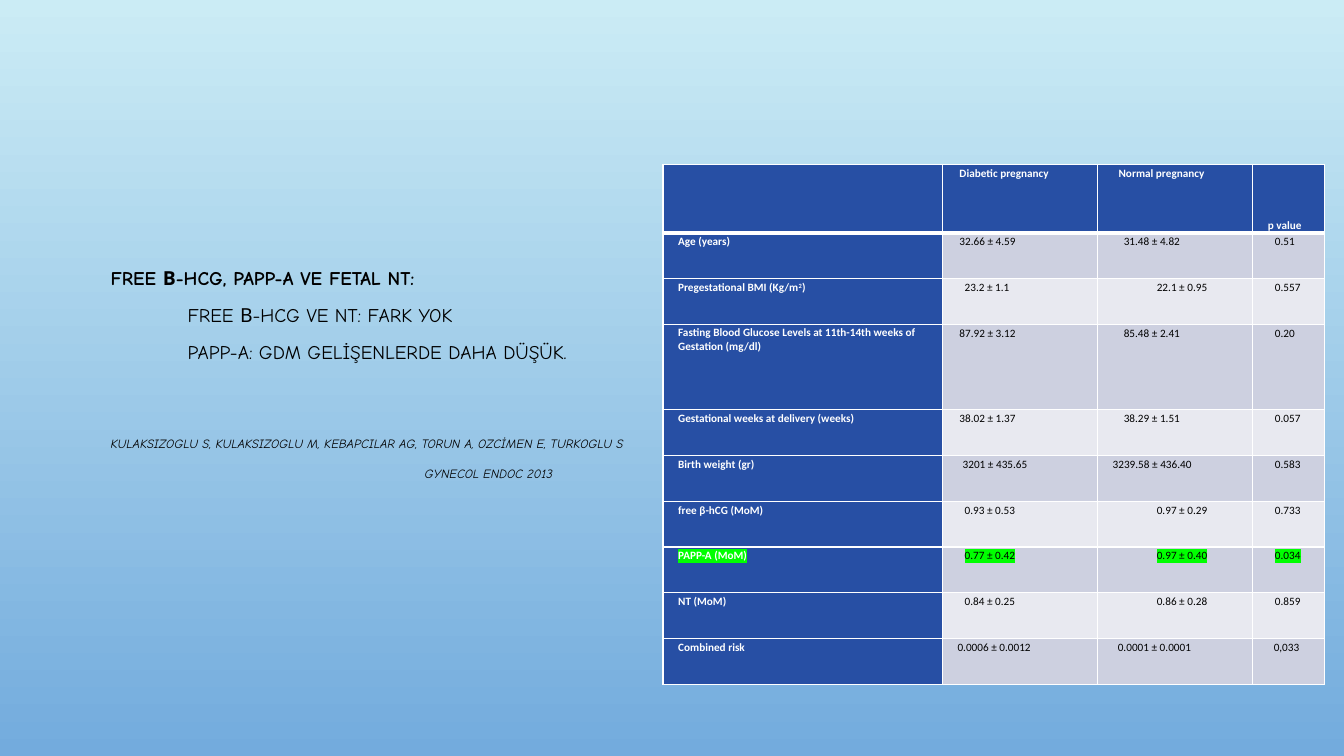
from dataclasses import dataclass

from lxml import etree
from pptx import Presentation
from pptx.dml.color import RGBColor
from pptx.enum.text import MSO_ANCHOR, PP_ALIGN
from pptx.oxml.ns import qn
from pptx.util import Cm, Pt

LEFT, CENTER = PP_ALIGN.LEFT, PP_ALIGN.CENTER
TOP, BOTTOM = MSO_ANCHOR.TOP, MSO_ANCHOR.BOTTOM


@dataclass(frozen=True)
class Theme:
    sky: str = "CBECF5"
    horizon: str = "73ABDD"
    navy: str = "274FA4"
    bands: tuple[str, str] = ("CDD0E0", "E8E9F0")
    white: str = "FFFFFF"
    black: str = "000000"
    marker: str = "00FF00"
    summary_font: str = "Comic Neue"
    table_font: str = "Calibri"
    summary_size: float = 13.8
    citation_size: float = 9
    table_size: float = 8


@dataclass(frozen=True)
class Statement:
    text: str
    size: float
    bold: bool = False
    italic: bool = False
    margin: float = 0
    before: float = 10


@dataclass(frozen=True)
class Entry:
    text: str
    margin: float = 0
    align: PP_ALIGN = LEFT
    first_line: float = 0.38
    anchor: MSO_ANCHOR = TOP


@dataclass(frozen=True)
class Measure:
    label: str
    diabetic: Entry
    normal: Entry
    p_value: Entry
    superscript: str = ""
    label_end: str = ""
    second_line: str = ""
    height: float = 1.155
    marked: bool = False


THEME = Theme()

STATEMENTS = [
    Statement("FREE Β-HCG, PAPP-A VE FETAL NT:", THEME.summary_size, bold=True, before=0),
    Statement("FREE Β-HCG VE NT: FARK YOK", THEME.summary_size, margin=1.94),
    Statement("PAPP-A: GDM GELİŞENLERDE DAHA DÜŞÜK.", THEME.summary_size, margin=1.94),
    Statement("KULAKSIZOGLU S, KULAKSIZOGLU M, KEBAPCILAR AG, TORUN A, OZCİMEN E, TURKOGLU S",
              THEME.citation_size, italic=True, before=52),
    Statement("GYNECOL ENDOC 2013", THEME.citation_size, italic=True, margin=7.91),
]

COLUMN_WIDTHS = [7.04, 3.91, 3.91, 1.8]
HEADER_HEIGHT = 1.73
HEADINGS = [
    Entry(""),
    Entry("Diabetic pregnancy", 0.3, first_line=0.13),
    Entry("Normal pregnancy", 0.38, first_line=0.15),
    Entry("p value", anchor=BOTTOM),
]
MEASURES = [
    Measure("Age (years)", Entry("32.66 ± 4.59", 0.05), Entry("31.48 ± 4.82", 0.28),
            Entry("0.51", 0.18)),
    Measure("Pregestational BMI (Kg/m", Entry("23.2 ± 1.1", 0.18),
            Entry("22.1 ± 0.95", 0.1, CENTER), Entry("0.557", 0.18),
            superscript="2", label_end=")"),
    Measure("Fasting Blood Glucose Levels at 11th-14th weeks of", Entry("87.92 ± 3.12", 0.05),
            Entry("85.48 ± 2.41", 0.28), Entry("0.20", 0.18),
            second_line="Gestation (mg/dl)", height=2.14),
    Measure("Gestational weeks at delivery (weeks)", Entry("38.02 ± 1.37", 0.05),
            Entry("38.29 ± 1.51", 0.28), Entry("0.057", 0.18)),
    Measure("Birth weight (gr)", Entry("3201 ± 435.65", 0.13), Entry("3239.58 ± 436.40"),
            Entry("0.583", 0.18)),
    Measure("free β-hCG (MoM)", Entry("0.93 ± 0.53", 0.18), Entry("0.97 ± 0.29", 0.1, CENTER),
            Entry("0.733", 0.18)),
    Measure("PAPP-A (MoM)", Entry("0.77 ± 0.42", 0.18), Entry("0.97 ± 0.40", 0.1, CENTER),
            Entry("0.034", 0.18), marked=True),
    Measure("NT (MoM)", Entry("0.84 ± 0.25", 0.18), Entry("0.86 ± 0.28", 0.1, CENTER),
            Entry("0.859", 0.18)),
    Measure("Combined risk", Entry("0.0006 ± 0.0012"), Entry("0.0001 ± 0.0001", 0.13),
            Entry("0,033", 0.15)),
]


def write(paragraph, text: str, *, size: float = THEME.table_size,
          font: str = THEME.table_font, color: str = THEME.black, bold: bool = False,
          italic: bool = False, margin: float = 0, first_line: float = 0,
          before: float = 0, spacing: float = 1.07, align: PP_ALIGN = LEFT,
          superscript: bool = False, marked: bool = False) -> None:
    paragraph.alignment = align
    paragraph.line_spacing = spacing
    paragraph.space_before = Pt(before)
    properties = paragraph._p.get_or_add_pPr()
    properties.set("marL", str(Cm(margin)))
    properties.set("indent", str(Cm(first_line)))
    run = paragraph.add_run()
    run.text = text
    run.font.size = Pt(size)
    run.font.name = font
    run.font.bold = bold
    run.font.italic = italic
    run.font.color.rgb = RGBColor.from_string(color)
    run_properties = run.font._element
    if superscript:
        run_properties.set("baseline", "30000")
    if marked:
        highlight = etree.Element(qn("a:highlight"))
        etree.SubElement(highlight, qn("a:srgbClr"), val=THEME.marker)
        run_properties.find(qn("a:solidFill")).addnext(highlight)


def style_cell(cell, fill: str, anchor: MSO_ANCHOR, bottom: float, top: float) -> None:
    cell.margin_left, cell.margin_right = Cm(0), Cm(0.13)
    cell.margin_top, cell.margin_bottom = Cm(0.03), Cm(0)
    cell.vertical_anchor = anchor
    properties = cell._tc.get_or_add_tcPr()
    for side, width in (("L", 1), ("R", 1), ("T", top), ("B", bottom)):
        border = etree.SubElement(properties, qn(f"a:ln{side}"), w=str(Pt(width)))
        paint = etree.SubElement(border, qn("a:solidFill"))
        etree.SubElement(paint, qn("a:srgbClr"), val=THEME.white)
    cell.fill.solid()
    cell.fill.fore_color.rgb = RGBColor.from_string(fill)


def write_entry(cell, entry: Entry, color: str, bold: bool, marked: bool = False) -> None:
    if entry.text:
        write(cell.text_frame.paragraphs[0], entry.text, color=color, bold=bold,
              margin=entry.margin, first_line=entry.first_line, align=entry.align,
              marked=marked)


def write_label(cell, measure: Measure) -> None:
    label = cell.text_frame.paragraphs[0]
    parts = (measure.label, measure.superscript, measure.label_end)
    for part in filter(None, parts):
        write(label, part, color=THEME.white, bold=True, first_line=0.38,
              spacing=0.97 if measure.second_line else 1.07,
              superscript=part == measure.superscript, marked=measure.marked)
    if measure.second_line:
        write(cell.text_frame.add_paragraph(), measure.second_line, color=THEME.white,
              bold=True, first_line=0.38)


def add_summary(slide) -> None:
    frame = slide.shapes.add_textbox(Cm(2.54), Cm(6.58), Cm(14.17), Cm(9.5)).text_frame
    frame.word_wrap = True
    for index, statement in enumerate(STATEMENTS):
        paragraph = frame.add_paragraph() if index else frame.paragraphs[0]
        write(paragraph, statement.text, size=statement.size, font=THEME.summary_font,
              bold=statement.bold, italic=statement.italic, margin=statement.margin,
              before=statement.before, spacing=1)


def add_measures(slide) -> None:
    heights = [HEADER_HEIGHT] + [measure.height for measure in MEASURES]
    table = slide.shapes.add_table(len(heights), len(COLUMN_WIDTHS), Cm(16.71), Cm(4.14),
                                   Cm(sum(COLUMN_WIDTHS)), Cm(sum(heights))).table
    table.first_row = table.horz_banding = False
    for column, width in zip(table.columns, COLUMN_WIDTHS):
        column.width = Cm(width)
    for row, height in zip(table.rows, heights):
        row.height = Cm(height)
    for column, heading in enumerate(HEADINGS):
        cell = table.cell(0, column)
        style_cell(cell, THEME.navy, heading.anchor, bottom=3, top=1)
        write_entry(cell, heading, THEME.white, bold=True)
    for row, measure in enumerate(MEASURES, start=1):
        top = 3 if row == 1 else 1
        label_cell = table.cell(row, 0)
        style_cell(label_cell, THEME.navy, TOP, bottom=1, top=top)
        write_label(label_cell, measure)
        entries = (measure.diabetic, measure.normal, measure.p_value)
        for column, entry in enumerate(entries, start=1):
            cell = table.cell(row, column)
            style_cell(cell, THEME.bands[(row - 1) % 2], entry.anchor, bottom=1, top=top)
            write_entry(cell, entry, THEME.black, bold=False, marked=measure.marked)


def main() -> None:
    deck = Presentation()
    deck.slide_width, deck.slide_height = Cm(33.87), Cm(19.05)
    slide = deck.slides.add_slide(deck.slide_layouts[6])
    backdrop = slide.background.fill
    backdrop.gradient()
    backdrop.gradient_angle = 270
    for stop, color in zip(backdrop.gradient_stops, (THEME.sky, THEME.horizon)):
        stop.color.rgb = RGBColor.from_string(color)
    add_summary(slide)
    add_measures(slide)
    deck.save("out.pptx")


if __name__ == "__main__":
    main()
